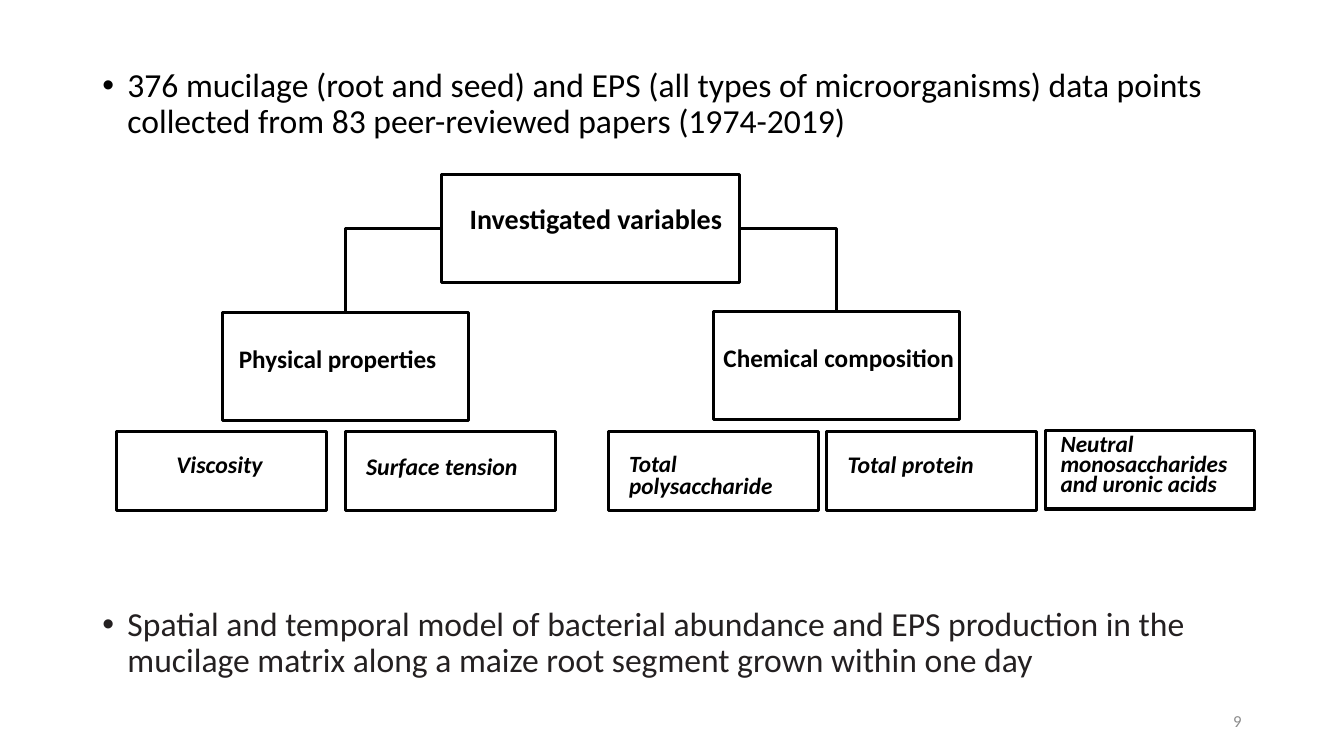
"""Build the slide on investigated mucilage and EPS variables."""
from lxml import etree
from pptx import Presentation
from pptx.dml.color import RGBColor
from pptx.enum.shapes import MSO_CONNECTOR, MSO_SHAPE
from pptx.enum.text import MSO_ANCHOR, PP_ALIGN
from pptx.oxml.ns import qn
from pptx.util import Pt

ELBOW = MSO_CONNECTOR.ELBOW
RECTANGLE = MSO_SHAPE.RECTANGLE
TOP, MIDDLE = MSO_ANCHOR.TOP, MSO_ANCHOR.MIDDLE
LEFT, RIGHT = PP_ALIGN.LEFT, PP_ALIGN.RIGHT

FONT = "Calibri"
BLACK = "000000"
OUTLINE = 2.25
BULLET_INDENT = 18
STATEMENT_LEFT, STATEMENT_WIDTH, STATEMENT_HEIGHT = 66, 828, 66

STATEMENTS = [
    ("376 mucilage (root and seed) and EPS (all types of microorganisms) data points "
     "collected from 83 peer-reviewed papers (1974-2019)", 45.4, BLACK),
    ("Spatial and temporal model of bacterial abundance and EPS production in the "
     "mucilage matrix along a maize root segment grown within one day", 430.4, "242021"),
]

LEVELS = {
    "root": {"extent": (213.1, 77), "font": {"size": Pt(20), "bold": True}},
    "group": {"extent": (175.7, 77), "font": {"size": Pt(18), "bold": True}},
    "leaf": {"extent": (149.8, 56.2), "font": {"size": Pt(17), "bold": True, "italic": True}},
    "long leaf": {"extent": (149.8, 56.2),
                  "font": {"size": Pt(16.6), "bold": True, "italic": True}},
}

# label, level, left and top of the box, left and top inset of the label, line spacing
VARIABLES = [
    ("Investigated variables", "root", (315.4, 124.6), (20, 22), 0.9),
    ("Physical properties", "group", (159.1, 223.2), (11.5, 24.5), 0.9),
    ("Chemical composition", "group", (509.8, 222.5), (7, 24.5), 0.9),
    ("Viscosity", "leaf", (83.5, 308.2), (42.5, 15), 0.9),
    ("Surface tension", "leaf", (247, 308.2), (14.5, 16.5), 0.9),
    ("Total polysaccharide", "long leaf", (434.9, 308.2), (14.5, 16.5), 0.8),
    ("Total protein", "leaf", (590.4, 308.2), (15, 15), 0.9),
    ("Neutral monosaccharides and uronic acids", "long leaf", (746.6, 307.4), (11, 5), 0.7),
]

# parent, side it leaves from, child
BRANCHES = [
    ("Investigated variables", 1, "Physical properties"),
    ("Investigated variables", 3, "Chemical composition"),
]


def color(hex_value):
    return RGBColor.from_string(hex_value)


def apply(target, values):
    for name, value in values.items():
        setattr(target, name, value)


def write(shape, text, font, hex_value, spacing=0.9, align=LEFT, anchor=TOP, bullet=False):
    frame = shape.text_frame
    apply(frame, {"word_wrap": True, "vertical_anchor": anchor})
    paragraph = frame.paragraphs[0]
    paragraph.text = text
    apply(paragraph, {"line_spacing": spacing, "alignment": align})
    if bullet:
        properties = paragraph._p.get_or_add_pPr()
        properties.set("marL", str(Pt(BULLET_INDENT)))
        properties.set("indent", str(-Pt(BULLET_INDENT)))
        etree.SubElement(properties, qn("a:buFont"), typeface="Arial")
        etree.SubElement(properties, qn("a:buChar"), char="•")
    apply(paragraph.runs[0].font, {"name": FONT, **font})
    paragraph.runs[0].font.color.rgb = color(hex_value)


def add_variable(slide, label, level, corner, inset, spacing):
    box = slide.shapes.add_shape(RECTANGLE, *map(Pt, corner + LEVELS[level]["extent"]))
    box.shadow.inherit = False
    box.fill.background()
    box.line.color.rgb = color(BLACK)
    box.line.width = Pt(OUTLINE)
    apply(box.text_frame, {"margin_left": Pt(inset[0]), "margin_top": Pt(inset[1]),
                           "margin_right": 0, "margin_bottom": 0})
    write(box, label, LEVELS[level]["font"], BLACK, spacing)
    return box


def add_branch(slide, parent, side, child):
    branch = slide.shapes.add_connector(ELBOW, 0, 0, 0, 0)
    branch.begin_connect(parent, side)
    branch.end_connect(child, 0)
    branch.line.color.rgb = color(BLACK)
    branch.line.width = Pt(OUTLINE)
    properties = branch._element.spPr
    properties.find(qn("a:prstGeom")).set("prst", "bentConnector2")
    etree.SubElement(properties, qn("a:effectLst"))


def main():
    deck = Presentation()
    deck.slide_width, deck.slide_height = Pt(960), Pt(540)
    slide = deck.slides.add_slide(deck.slide_layouts[6])

    for text, top, hex_value in STATEMENTS:
        statement = slide.shapes.add_textbox(
            Pt(STATEMENT_LEFT), Pt(top), Pt(STATEMENT_WIDTH), Pt(STATEMENT_HEIGHT))
        write(statement, text, {"size": Pt(24)}, hex_value, bullet=True)

    boxes = {variable[0]: add_variable(slide, *variable) for variable in VARIABLES}
    for parent, side, child in BRANCHES:
        add_branch(slide, boxes[parent], side, boxes[child])

    page_number = slide.shapes.add_textbox(Pt(678), Pt(500.5), Pt(216), Pt(28.8))
    write(page_number, "9", {"size": Pt(12)}, "8C8C8C", 1.0, RIGHT, MIDDLE)

    deck.save("out.pptx")


if __name__ == "__main__":
    main()
